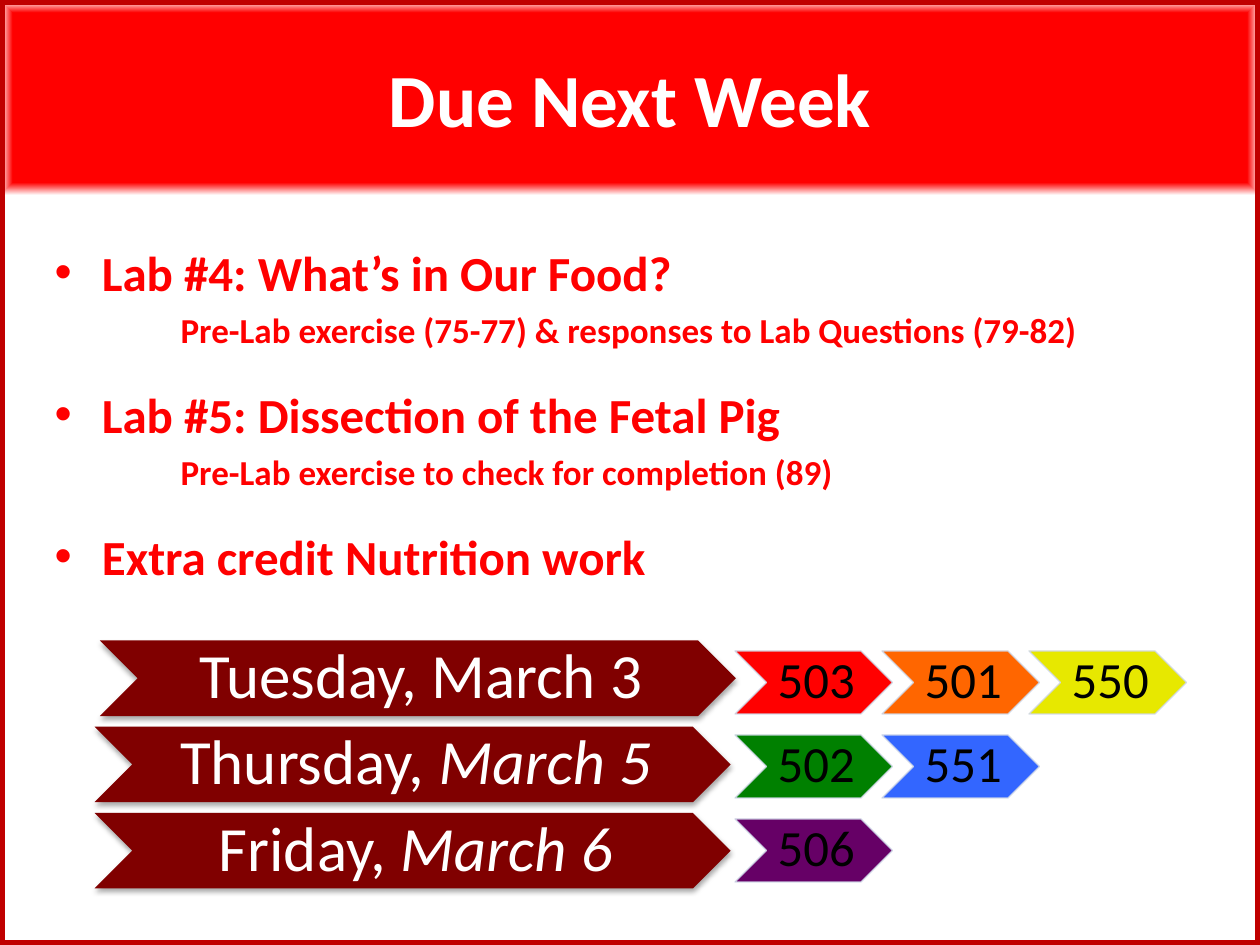
from pptx import Presentation
from pptx.dml.color import RGBColor
from pptx.enum.shapes import MSO_SHAPE as Preset
from pptx.enum.text import MSO_ANCHOR as Anchor, MSO_AUTO_SIZE as AutoSize, PP_ALIGN as Align
from pptx.oxml import parse_xml
from pptx.oxml.ns import nsdecls
from pptx.util import Pt

COLORS = {
    "red": "FF0000", "white": "FFFFFF", "black": "000000", "frame": "C00000",
    "maroon": "800000", "orange": "FF6600", "yellow": "E7E800", "green": "008000",
    "blue": "3366FF", "purple": "660066", "outline": "D0D8E8",
}
LABS = [
    ("Lab #4: What’s in Our Food?",
     "Pre-Lab exercise (75-77) & responses to Lab Questions (79-82)"),
    ("Lab #5: Dissection of the Fetal Pig", "Pre-Lab exercise to check for completion (89)"),
    ("Extra credit Nutrition work", None),
]
# Left edge, weekday, date, italic date, sections
DAYS = [
    (57, "Tuesday, ", "March 3", False,
     [("503", "red"), ("501", "orange"), ("550", "yellow")]),
    (54, "Thursday, ", "March 5", True, [("502", "green"), ("551", "blue")]),
    (54, "Friday, ", "March 6", True, [("506", "purple")]),
]


def rgb(name):
    return RGBColor.from_string(COLORS[name])


def place(shape, left, top, width, height):
    shape.left, shape.top = Pt(left), Pt(top)
    shape.width, shape.height = Pt(width), Pt(height)


def set_insets(frame, left, top, right, bottom):
    frame.margin_left, frame.margin_top = Pt(left), Pt(top)
    frame.margin_right, frame.margin_bottom = Pt(right), Pt(bottom)


def add_span(para, text, size, color, bold=False, italic=False):
    span = para.add_run()
    span.text = text
    font = span.font
    font.name, font.size = "Calibri", Pt(size)
    font.bold, font.italic = bold, italic
    font.color.rgb = rgb(color)


def add_title(page):
    title = page.shapes.title
    place(title, 0, 0, 720, 111.6)
    title._element.spPr.append(parse_xml(
        f'<a:gradFill {nsdecls("a")} rotWithShape="1"><a:gsLst>'
        f'<a:gs pos="87000"><a:srgbClr val="{COLORS["red"]}"/></a:gs>'
        f'<a:gs pos="100000"><a:srgbClr val="{COLORS["white"]}"/></a:gs></a:gsLst>'
        '<a:path path="rect"><a:fillToRect l="50000" t="50000" r="50000" b="50000"/>'
        '</a:path></a:gradFill>'))
    title.line.color.rgb = rgb("white")
    title.line.width = Pt(0.75)
    frame = title.text_frame
    frame.auto_size = AutoSize.NONE
    frame.vertical_anchor = Anchor.MIDDLE
    para = frame.paragraphs[0]
    para.alignment = Align.CENTER
    add_span(para, "Due Next Week", 42.9, "white", bold=True)


def format_item(para, left, indent, before, bullet):
    para.space_before = Pt(before)
    props = para._p.get_or_add_pPr()
    props.set("marL", str(Pt(left)))
    props.set("indent", str(Pt(indent)))
    if bullet:
        props.append(parse_xml(f'<a:buFont {nsdecls("a")} typeface="Arial"/>'))
        props.append(parse_xml(f'<a:buChar {nsdecls("a")} char="•"/>'))
    else:
        props.append(parse_xml(f'<a:buNone {nsdecls("a")}/>'))


def add_lab_list(page):
    body = page.placeholders[1]
    place(body, 24, 114, 696, 414)
    frame = body.text_frame
    frame.auto_size = AutoSize.NONE
    frame.vertical_anchor = Anchor.TOP
    set_insets(frame, 7.2, 24.5, 7.2, 3.6)
    for index, (heading, detail) in enumerate(LABS):
        para = frame.add_paragraph() if index else frame.paragraphs[0]
        format_item(para, 27, -27, 19.5 if index else 0, bullet=True)
        add_span(para, heading, 28, "red", bold=True)
        if detail:
            para = frame.add_paragraph()
            format_item(para, 72, 0, 4, bullet=False)
            add_span(para, detail, 20, "red", bold=True)


def add_frame(page):
    border = page.shapes.add_shape(Preset.RECTANGLE, 0, 0, Pt(720), Pt(540))
    border.fill.background()
    border.line.color.rgb = rgb("frame")
    border.line.width = Pt(6)
    border.shadow.inherit = False


def add_chevron(page, left, top, width, height, fill, insets):
    """Return the chevron and its one centred paragraph."""
    chevron = page.shapes.add_shape(Preset.CHEVRON, Pt(left), Pt(top), Pt(width), Pt(height))
    chevron.fill.solid()
    chevron.fill.fore_color.rgb = rgb(fill)
    chevron.line.fill.background()
    chevron.shadow.inherit = False
    frame = chevron.text_frame
    frame.word_wrap = True
    frame.vertical_anchor = Anchor.MIDDLE
    set_insets(frame, *insets)
    para = frame.paragraphs[0]
    para.alignment = Align.CENTER
    para.line_spacing = 0.9
    return chevron, para


def add_day(page, left, top, weekday, date, italic):
    chevron, para = add_chevron(page, left, top, 363.5, 43.2, "maroon", (3.6, 2, 0, 2))
    effects = chevron._element.spPr.find("{*}effectLst")
    effects.append(parse_xml(
        f'<a:outerShdw {nsdecls("a")} blurRad="{Pt(3.1)}" dist="{Pt(1.8)}" dir="5400000" '
        f'rotWithShape="0"><a:srgbClr val="{COLORS["black"]}"><a:alpha val="35000"/>'
        '</a:srgbClr></a:outerShdw>'))
    add_span(para, weekday, 36, "white")
    add_span(para, date, 36, "white", italic=italic)


def add_section(page, left, top, number, fill):
    chevron, para = add_chevron(page, left, top, 90, 36, fill, (2.9, 1.4, 0, 1.4))
    chevron.line.color.rgb = rgb("outline")
    chevron.line.width = Pt(0.75)
    color = chevron._element.spPr.find("{*}ln/{*}solidFill/{*}srgbClr")
    color.append(parse_xml(f'<a:alpha {nsdecls("a")} val="90000"/>'))
    add_span(para, number, 29, "black")


def main():
    deck = Presentation()
    deck.slide_width, deck.slide_height = Pt(720), Pt(540)
    page = deck.slides.add_slide(deck.slide_layouts[1])
    add_title(page)
    add_lab_list(page)
    add_frame(page)
    for row, (left, weekday, date, italic, sections) in enumerate(DAYS):
        add_day(page, left, 366 + 49.25 * row, weekday, date, italic)
        for column, (number, fill) in enumerate(sections):
            add_section(page, 420 + 84 * column, 372 + 48 * row, number, fill)
    deck.save("out.pptx")


if __name__ == "__main__":
    main()
